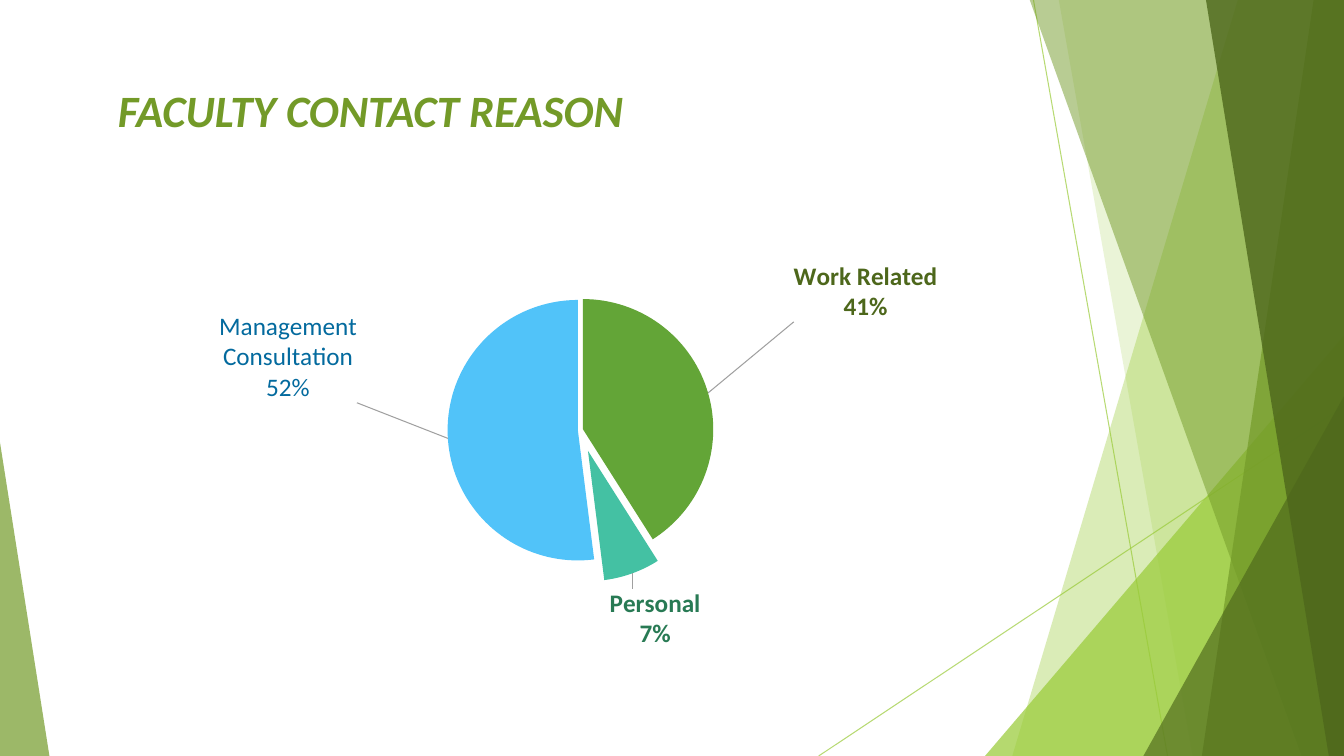
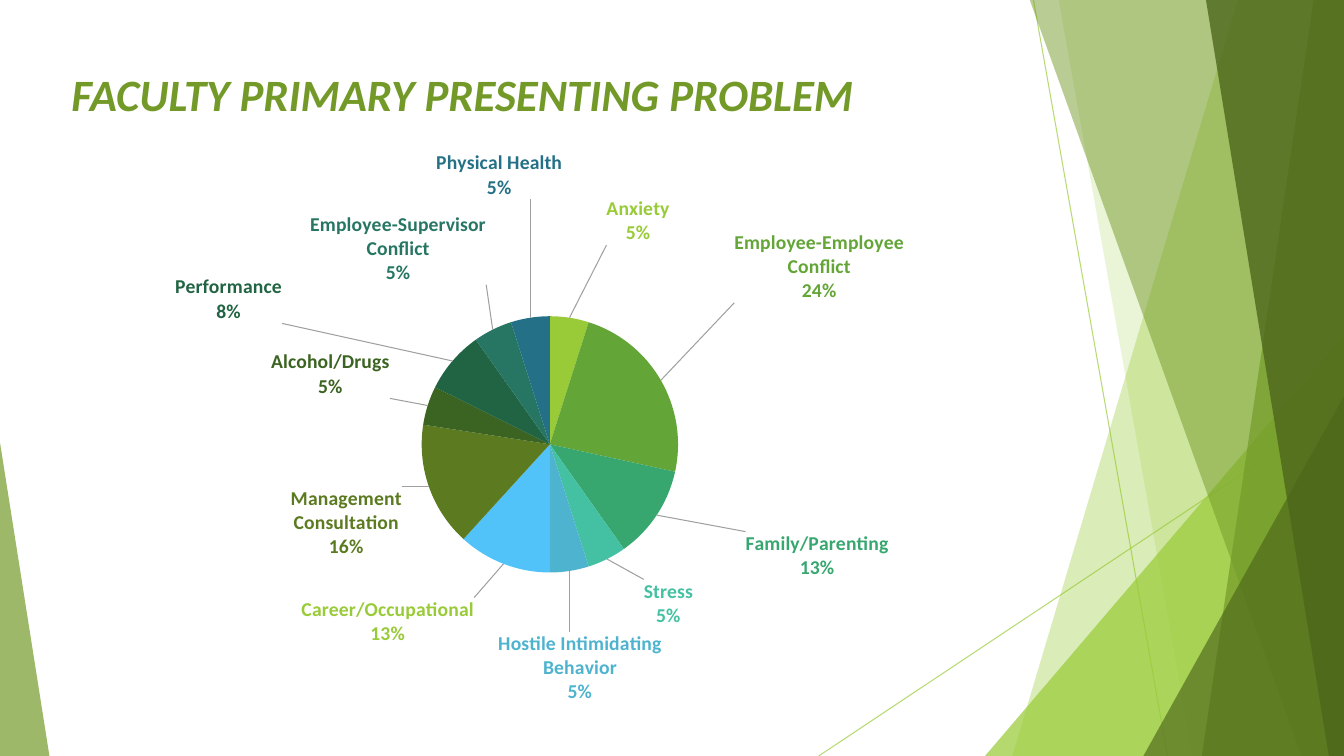
from typing import NamedTuple

from pptx import Presentation
from pptx.chart.data import CategoryChartData as Data
from pptx.dml.color import RGBColor as Rgb
from pptx.enum.chart import XL_CHART_TYPE as Kind, XL_LABEL_POSITION as Place
from pptx.enum.shapes import MSO_CONNECTOR as Link, MSO_SHAPE as Form
from pptx.oxml import parse_xml
from pptx.oxml.ns import nsdecls, qn
from pptx.util import Inches, Pt

HUES = {
    "lime": "99CB38",
    "olive": "739A28",
    "moss": "4D671B",
    "leaf": "63A537",
    "jade": "37A76F",
    "mint": "44C1A3",
    "lake": "4EB3CF",
    "sky": "51C3F9",
    "fern": "5C7B20",
    "forest": "3B6321",
    "pine": "216443",
    "teal": "277663",
    "steel": "247187",
    "emerald": "287A54",
    "ocean": "036A9E",
    "gray": "A0A0A0",
    "black": "000000",
}
WIDE, HIGH, TOP = 13.33, 7.5, -0.01
FONT = "Calibri"


class Box(NamedTuple):
    x: float
    y: float
    w: float
    h: float


class Ray(NamedTuple):
    x1: float
    y1: float
    x2: float
    y2: float


class Band(NamedTuple):
    """Full-height band running from a slanted left edge to the slide's right."""
    top: float
    foot: float
    hue: str
    alpha: int


class Wedge(NamedTuple):
    box: Box
    tip: int
    hue: str
    alpha: int


class Slice(NamedTuple):
    """dx and dy move the label, in percent of the chart; share is fixed text."""
    name: str
    value: int
    hue: str
    text: str
    dx: float
    dy: float
    burst: int = 0
    bold: bool = True
    share: str = ""


class Pie(NamedTuple):
    """The plot box is in percent of the chart's size."""
    title: str
    head: Box
    frame: Box
    plot: Box
    size: int
    burst: int
    slices: list[Slice]


RAYS = [Ray(10.25, 0, 11.58, HIGH), Ray(WIDE, 4.03, 8.12, HIGH)]
DECOR = [
    Band(12.28, 10.04, "lime", 36),
    Band(10.5, 11.83, "lime", 20),
    Wedge(Box(9.77, 3.33, 3.56, 4.17), 1, "lime", 72),
    Band(10.21, 12.91, "olive", 50),
    Band(13.03, 11.92, "olive", 70),
    Band(11.96, 13.18, "moss", 80),
    Wedge(Box(11.34, 3.93, 1.99, 3.57), 1, "moss", 66),
    Wedge(Box(0, 4.39, 0.49, 3.11), 0, "olive", 70),
]
PIES = [
    Pie("FACULTY CONTACT REASON",
        Box(1.07, 0.77, 9.4, 0.75), Box(1.47, 1.14, 8.35, 5.3),
        Box(18.8, 27.3, 65.1, 63.4), 18, 30, [
            Slice("Work Related", 41, "leaf", "moss", 9.5, -13, 2),
            Slice("Personal", 7, "mint", "emerald", -2.9, 1.9, 17),
            Slice("Management Consultation", 52, "sky", "ocean",
                  -10.1, -15.3, 2, False),
        ]),
    Pie("FACULTY PRIMARY PRESENTING PROBLEM",
        Box(0.61, 0.61, 11.67, 1.44), Box(0.61, 1.06, 9.68, 5.97),
        Box(28.4, 34.8, 43.3, 42.6), 14, 0, [
            Slice("Anxiety", 5, "lime", "lime", 3.7, -11.1),
            Slice("Employee-Employee Conflict", 24, "leaf", "leaf", 7, -12.4),
            Slice("Family/Parenting", 12, "jade", "jade", 8.6, 2.2, share="13%"),
            Slice("Stress", 5, "mint", "mint", 3.5, 2.5),
            Slice("Hostile Intimidating Behavior", 5, "lake", "lake", -7.4, 9.1),
            Slice("Career/Occupational", 12, "sky", "lime", -2.8, 4.7, share="13%"),
            Slice("Management Consultation", 16, "fern", "fern", -2.2, -0.4),
            Slice("Alcohol/Drugs", 5, "forest", "forest", -3.3, -0.9),
            Slice("Performance", 8, "pine", "pine", -17, -5.6),
            Slice("Employee-Supervisor Conflict", 5, "teal", "teal", -0.4, -6.6),
            Slice("Physical Health", 5, "steel", "steel", 3.4, -18.7),
        ]),
]


def tone(hue: str) -> Rgb:
    return Rgb.from_string(HUES[hue])


def inches(nums: tuple) -> list[int]:
    return [Inches(num) for num in nums]


def node(text: str):
    """Make an XML element, adding the chart and drawing namespaces."""
    tag, rest = text[1:].split(">", 1)
    slash = "/" if tag.endswith("/") else ""
    return parse_xml(f"<{tag.rstrip('/')} {nsdecls('c', 'a')}{slash}>{rest}")


def fade(shape, alpha: int) -> None:
    for color in shape._element.spPr.iter(qn("a:srgbClr")):
        color.append(node(f'<a:alpha val="{alpha * 1000}"/>'))


def paint(shape, hue: str, alpha: int) -> None:
    shape.shadow.inherit = False
    shape.fill.solid()
    shape.fill.fore_color.rgb = tone(hue)
    shape.line.fill.background()
    fade(shape, alpha)


def add_ray(slide, ray: Ray) -> None:
    line = slide.shapes.add_connector(Link.STRAIGHT, *inches(ray))
    line.line.color.rgb = tone("lime")
    line.line.width = Pt(0.75)
    fade(line, 70)
    line._element.spPr.append(node("<a:effectLst/>"))


def add_band(slide, band: Band) -> None:
    edge = slide.shapes.build_freeform(Inches(band.top), Inches(TOP))
    ends = [(WIDE, TOP), (WIDE, HIGH), (band.foot, HIGH)]
    edge.add_line_segments([inches(end) for end in ends])
    paint(edge.convert_to_shape(), band.hue, band.alpha)


def add_wedge(slide, wedge: Wedge) -> None:
    shape = slide.shapes.add_shape(Form.ISOSCELES_TRIANGLE, *inches(wedge.box))
    shape.adjustments[0] = wedge.tip
    paint(shape, wedge.hue, wedge.alpha)


def add_decor(slide) -> None:
    for ray in RAYS:
        add_ray(slide, ray)
    for part in DECOR:
        if isinstance(part, Band):
            add_band(slide, part)
        else:
            add_wedge(slide, part)


def set_font(font, size: int, hue: str, bold: bool) -> None:
    font.name, font.size, font.bold = FONT, Pt(size), bold
    font.color.rgb = tone(hue)


def add_title(slide, text: str, box: Box) -> None:
    frame = slide.shapes.add_textbox(*inches(box)).text_frame
    frame.word_wrap = True
    para = frame.paragraphs[0]
    para.text = text
    set_font(para.font, 32, "olive", True)
    para.font.italic = True


def show_share(labels) -> None:
    """Show category and percent on separate lines, for one label or all."""
    for tag in ("LegendKey", "Val", "CatName", "SerName", "Percent", "BubbleSize"):
        flag = labels.find(qn(f"c:show{tag}"))
        flag.set("val", "1" if tag in ("CatName", "Percent") else "0")
    flag.addnext(node("<c:separator>\n</c:separator>"))


def set_plot(chart, box: Box) -> None:
    area = chart._chartSpace.chart.plotArea
    for old in area.findall(qn("c:layout")):
        area.remove(old)
    sides = "".join(f'<c:{key} val="{val / 100:.3f}"/>'
                    for key, val in box._asdict().items())
    area.insert(0, node(
        '<c:layout><c:manualLayout><c:layoutTarget val="inner"/>'
        '<c:xMode val="edge"/><c:yMode val="edge"/>'
        f"{sides}</c:manualLayout></c:layout>"))


def set_lines(labels) -> None:
    """Turn on thin gray leader lines."""
    for old in labels.findall(qn("c:showLeaderLines")):
        labels.remove(old)
    labels.append(node('<c:showLeaderLines val="1"/>'))
    labels.append(node(
        '<c:leaderLines><c:spPr><a:ln w="9525"><a:solidFill>'
        f'<a:srgbClr val="{HUES["gray"]}"/>'
        "</a:solidFill></a:ln></c:spPr></c:leaderLines>"))


def burst(parent, after: str, size: int) -> None:
    parent.find(qn(after)).addnext(node(f'<c:explosion val="{size}"/>'))


def style_slice(point, part: Slice, size: int) -> None:
    fill = point.format.fill
    fill.solid()
    fill.fore_color.rgb = tone(part.hue)
    point.format.line.fill.background()
    label = point.data_label
    if part.share:
        label.text_frame.text = f"{part.name}\n{part.share}"
        for para in label.text_frame.paragraphs:
            set_font(para.runs[0].font, size, part.text, part.bold)
    else:
        set_font(label.font, size, part.text, part.bold)
    label.position = Place.OUTSIDE_END


def place_label(label, part: Slice) -> None:
    show_share(label)
    idx, rich = label.find(qn("c:idx")), label.find(qn("c:tx"))
    (idx if rich is None else rich).addnext(
        node('<c:numFmt formatCode="0%" sourceLinked="0"/>'))
    idx.addnext(node(
        f'<c:layout><c:manualLayout><c:x val="{part.dx / 100:.3f}"/>'
        f'<c:y val="{part.dy / 100:.3f}"/></c:manualLayout></c:layout>'))


def add_pie(slide, pie: Pie) -> None:
    data = Data()
    data.categories = [part.name for part in pie.slices]
    data.add_series("Series 1", [part.value for part in pie.slices])
    chart = slide.shapes.add_chart(Kind.PIE, *inches(pie.frame), data).chart
    chart.has_legend = chart.has_title = False
    chart.font.name, chart.font.size = "Lato", Pt(10)
    chart.font.color.rgb = tone("black")
    set_plot(chart, pie.plot)
    plot = chart.plots[0]
    plot.vary_by_categories = True
    series = plot.series[0]
    labels = series.data_labels
    set_font(labels.font, pie.size, pie.slices[0].hue, True)
    labels.number_format, labels.number_format_is_linked = "0%", False
    labels.position = Place.OUTSIDE_END
    for num, part in enumerate(pie.slices):
        style_slice(series.points[num], part, pie.size)

    root = series._element
    group = root.find(qn("c:dLbls"))
    show_share(group)
    set_lines(group)
    for label, part in zip(group.findall(qn("c:dLbl")), pie.slices):
        place_label(label, part)
    if pie.burst:
        burst(root, "c:tx", pie.burst)
        for dot, part in zip(root.findall(qn("c:dPt")), pie.slices):
            burst(dot, "c:idx", part.burst)


def main() -> None:
    deck = Presentation()
    deck.slide_width, deck.slide_height = Inches(WIDE), Inches(HIGH)
    for pie in PIES:
        slide = deck.slides.add_slide(deck.slide_layouts[6])
        add_decor(slide)
        add_title(slide, pie.title, pie.head)
        add_pie(slide, pie)
    deck.save("out.pptx")


if __name__ == "__main__":
    main()
